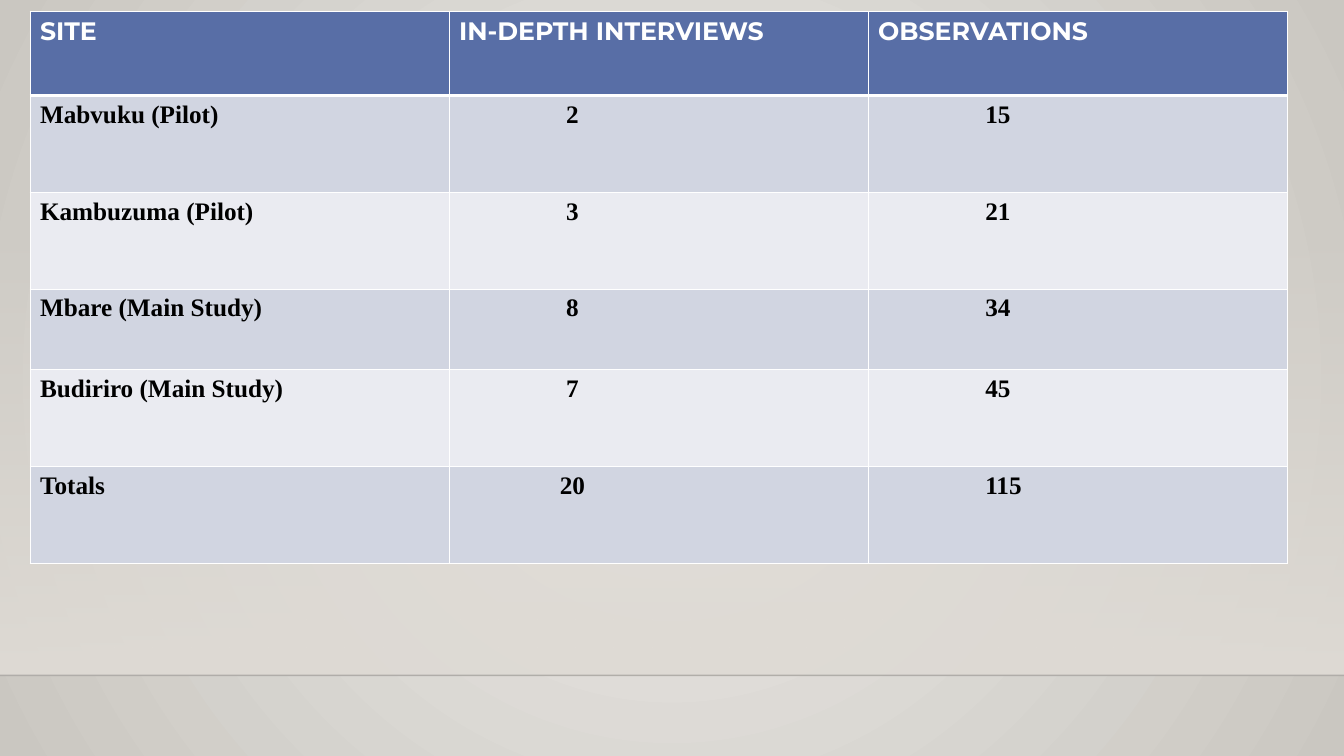
from lxml.etree import SubElement
from pptx import Presentation
from pptx.dml.color import RGBColor
from pptx.enum.shapes import MSO_CONNECTOR as CONNECTOR, MSO_SHAPE as SHAPE
from pptx.oxml.ns import qn
from pptx.util import Cm, Pt

COLORS = {
    "glow": "ECEAE7", "edge": "CAC7C1", "wall": "DFDBD5", "floor": "000001",
    "header": "586EA6", "odd": "D1D5E1", "even": "EAEBF1",
    "white": "FFFFFF", "black": "000000",
}
SLIDE_WIDTH, SLIDE_HEIGHT = Cm(33.87), Cm(19.05)
FLOOR_TOP = Cm(17.02)
ROW_HEIGHTS = [2.13, 2.44, 2.44, 2.03, 2.44, 2.44]
HEADINGS = ["SITE", "IN-DEPTH INTERVIEWS", "OBSERVATIONS"]
SITES = [
    ("Mabvuku (Pilot)", 2, 15),
    ("Kambuzuma (Pilot)", 3, 21),
    ("Mbare (Main Study)", 8, 34),
    ("Budiriro (Main Study)", 7, 45),
    ("Totals", 20, 115),
]
CELL_MARGIN, COUNT_MARGIN, TOTAL_MARGIN = Cm(0.25), Cm(2.95), Cm(2.79)


def rgb(name):
    """Return the named colour."""
    return RGBColor.from_string(COLORS[name])


def set_alpha(parent, percent):
    """Set the opacity of the first plain colour under an element."""
    color = next(parent.iter(qn("a:srgbClr")))
    SubElement(color, qn("a:alpha"), val=str(percent * 1000))


def set_gradient(fill, first, last):
    """Give a fill a gradient between two named colours."""
    fill.gradient()
    for stop, name in zip(fill.gradient_stops, (first, last)):
        stop.color.rgb = rgb(name)


def add_backdrop(slide, left, top, width, height):
    """Paint the radial background, the wall shade and the floor line."""
    set_gradient(slide.background.fill, "glow", "edge")
    radial = next(slide.element.iter(qn("a:gradFill")))
    radial.remove(radial.find(qn("a:lin")))
    circle = SubElement(radial, qn("a:path"))
    circle.set("path", "circle")
    SubElement(circle, qn("a:fillToRect"), {side: "50000" for side in "ltrb"})

    shade_top = top + Cm(5.61)
    wall = slide.shapes.add_shape(
        SHAPE.RECTANGLE, left, shade_top, width, FLOOR_TOP - shade_top)
    wall.shadow.inherit = False
    wall.line.fill.background()
    set_gradient(wall.fill, "wall", "wall")
    wall.fill.gradient_angle = 270
    set_alpha(wall.element.spPr, 0)

    floor = slide.shapes.add_connector(
        CONNECTOR.STRAIGHT, left, FLOOR_TOP, left + width, FLOOR_TOP)
    floor.line.color.rgb = rgb("floor")
    floor.line.width = Pt(1)
    set_alpha(floor.element.spPr, 20)
    SubElement(floor.element.spPr, qn("a:effectLst"))


def add_borders(cell, top, bottom):
    """Draw white borders with the given top and bottom widths in points."""
    properties = cell._tc.get_or_add_tcPr()
    for side, points in (("L", 1), ("R", 1), ("T", top), ("B", bottom)):
        line = SubElement(properties, qn(f"a:ln{side}"), w=str(Pt(points)))
        solid = SubElement(line, qn("a:solidFill"))
        SubElement(solid, qn("a:srgbClr"), val=COLORS["white"])


def fill_cell(cell, text, row, margin):
    """Write and style one cell according to its row."""
    is_header = row == 0
    add_borders(cell, 3 if row == 1 else 1, 3 if is_header else 1)
    cell.fill.solid()
    cell.fill.fore_color.rgb = rgb("header" if is_header else "odd" if row % 2 else "even")
    cell.margin_left = margin
    cell.text = str(text)
    font = cell.text_frame.paragraphs[0].font
    font.name = "Montserrat" if is_header else "Times New Roman"
    font.size = Pt(18)
    font.bold = True
    font.color.rgb = rgb("white" if is_header else "black")


def add_site_table(slide, left, top, width, height):
    """Place the table of interviews and observations per site."""
    rows = [HEADINGS, *SITES]
    table = slide.shapes.add_table(
        len(rows), len(HEADINGS), left, top, width, height).table
    for row, (values, row_height) in enumerate(zip(rows, ROW_HEIGHTS)):
        table.rows[row].height = Cm(row_height)
        for column, value in enumerate(values):
            margin = CELL_MARGIN
            if row and column:
                margin = TOTAL_MARGIN if value == 20 else COUNT_MARGIN
            fill_cell(table.cell(row, column), value, row, margin)


def main():
    """Build and save the slide."""
    deck = Presentation()
    deck.slide_width, deck.slide_height = SLIDE_WIDTH, SLIDE_HEIGHT
    slide = deck.slides.add_slide(deck.slide_layouts[6])
    add_backdrop(slide, 0, 0, SLIDE_WIDTH, SLIDE_HEIGHT)
    add_site_table(slide, Cm(0.76), Cm(0.28), Cm(31.68), Cm(sum(ROW_HEIGHTS)))
    deck.save("out.pptx")


if __name__ == "__main__":
    main()
